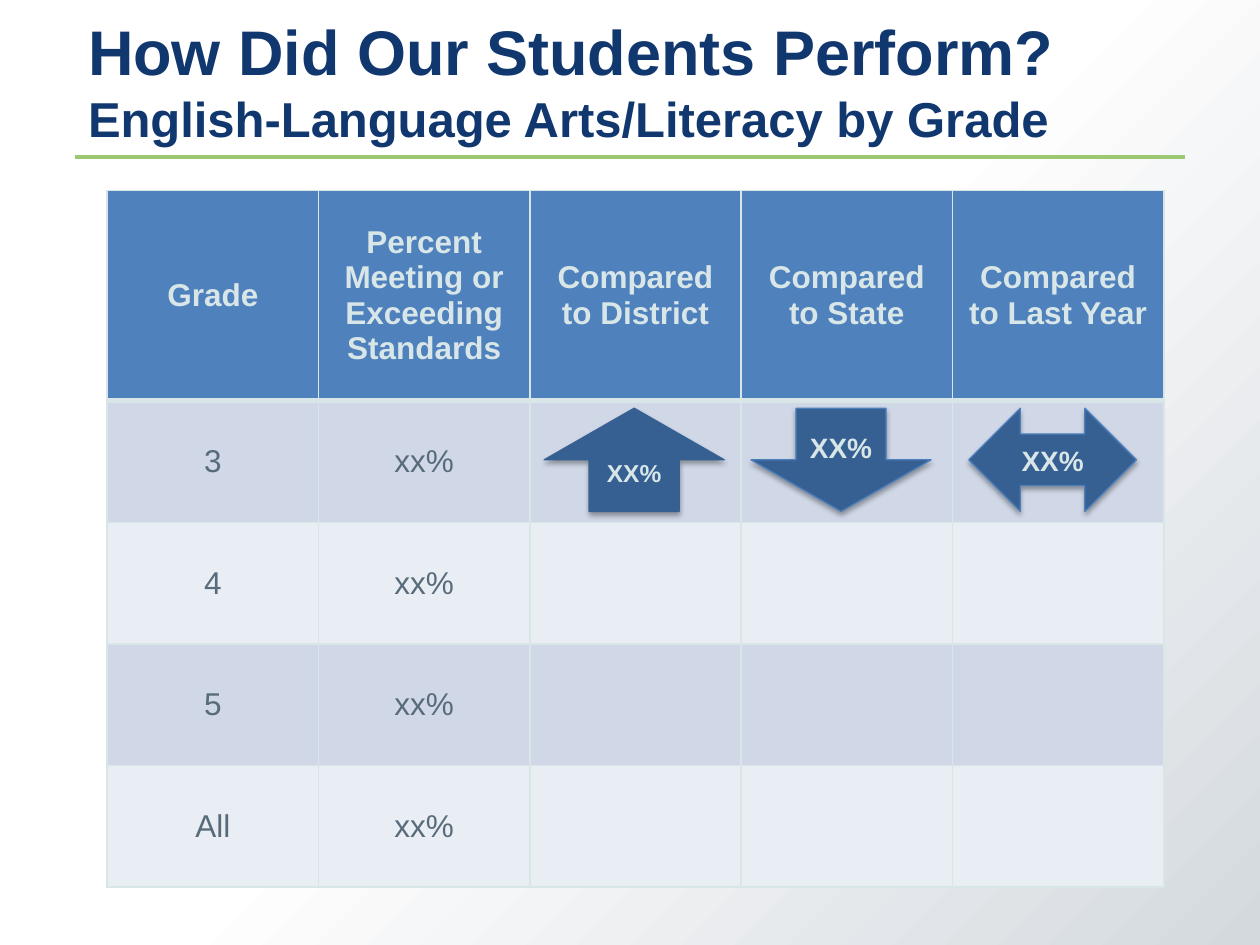
from lxml import etree
from pptx import Presentation
from pptx.dml.color import RGBColor
from pptx.enum.shapes import MSO_CONNECTOR, MSO_SHAPE
from pptx.enum.text import MSO_ANCHOR, MSO_AUTO_SIZE, PP_ALIGN
from pptx.oxml import parse_xml
from pptx.oxml.ns import nsdecls, qn
from pptx.util import Cm, Pt

UP, DOWN, BOTH = MSO_SHAPE.UP_ARROW, MSO_SHAPE.DOWN_ARROW, MSO_SHAPE.LEFT_RIGHT_ARROW
STRAIGHT = MSO_CONNECTOR.STRAIGHT
MIDDLE, BOTTOM = MSO_ANCHOR.MIDDLE, MSO_ANCHOR.BOTTOM
LEFT, CENTER = PP_ALIGN.LEFT, PP_ALIGN.CENTER
NO_FIT = MSO_AUTO_SIZE.NONE

WHITE = RGBColor(0xFF, 0xFF, 0xFF)
GRAY = RGBColor(0xD4, 0xD9, 0xDE)
NAVY = RGBColor(0x11, 0x37, 0x6F)
GREEN = RGBColor(0x9B, 0xC8, 0x72)
PALE = RGBColor(0xD8, 0xE6, 0xE8)
SLATE = RGBColor(0x58, 0x6B, 0x7A)
HEAD = RGBColor(0x4F, 0x81, 0xBD)
BANDS = RGBColor(0xE9, 0xED, 0xF4), RGBColor(0xD0, 0xD8, 0xE8)
DARK = RGBColor(0x37, 0x60, 0x92)
EDGE = RGBColor(0x4B, 0x7E, 0xBC)

PERCENT = "Percent Meeting or Exceeding Standards"
ROWS = [
    ["Grade", PERCENT, "Compared to District", "Compared to State", "Compared to Last Year"],
    ["3", "xx%"],
    ["4", "xx%"],
    ["5", "xx%"],
    ["All", "xx%"],
]


class Page:
    font = "Arial"

    def __init__(self, deck):
        self.slide = deck.slides.add_slide(deck.slide_layouts[5])
        self.shapes = self.slide.shapes

    def style(self, para, size, color, bold=True, align=CENTER):
        para.alignment = align
        para.font.name = self.font
        para.font.size = Pt(size)
        para.font.bold = bold
        para.font.color.rgb = color

    def backdrop(self, start, end):
        fill = self.slide.background.fill
        fill.gradient()
        fill.gradient_angle = 315
        for stop, place, color in zip(fill.gradient_stops, (0.5, 1), (start, end)):
            stop.position = place
            stop.color.rgb = color

    def rule(self, left, right, top):
        line = self.shapes.add_connector(STRAIGHT, Cm(left), Cm(top), Cm(right), Cm(top))
        line.line.color.rgb = GREEN
        line.line.width = Pt(2)
        etree.SubElement(line._element.spPr, qn("a:effectLst"))

    def title(self, main, sub, left, top, width, height):
        box = self.shapes.title
        box.left, box.top, box.width, box.height = map(Cm, (left, top, width, height))
        frame = box.text_frame
        frame.auto_size = NO_FIT
        frame.word_wrap = True
        frame.vertical_anchor = BOTTOM
        para = frame.paragraphs[0]
        self.style(para, 36, NAVY, align=LEFT)
        para.line_spacing = 1
        para.space_before = Pt(0)
        para.add_run().text = main
        para.add_line_break()
        run = para.add_run()
        run.text = sub
        run.font.size = Pt(28)

    def border(self, cell, **widths):
        props = cell._tc.get_or_add_tcPr()
        for side in "LRTB":
            props.append(parse_xml(
                f'<a:ln{side} {nsdecls("a")} w="{Pt(widths.get(side, 1))}"><a:solidFill>'
                f'<a:srgbClr val="{PALE}"/></a:solidFill></a:ln{side}>'))

    def table(self, rows, left, top, width, heights):
        cols = len(rows[0])
        grid = self.shapes.add_table(len(rows), cols, Cm(left), Cm(top),
                                     Cm(width * cols), Cm(sum(heights))).table
        for col in grid.columns:
            col.width = Cm(width)
        for i, (words, height) in enumerate(zip(rows, heights)):
            grid.rows[i].height = Cm(height)
            for cell in grid.rows[i].cells:
                self.border(cell, **{0: {"B": 3}, 1: {"T": 3}}.get(i, {}))
                cell.fill.solid()
                cell.fill.fore_color.rgb = BANDS[i % 2] if i else HEAD
                cell.vertical_anchor = MIDDLE
            for cell, text in zip(grid.rows[i].cells, words):
                cell.text = text
                para = cell.text_frame.paragraphs[0]
                self.style(para, 18, SLATE if i else PALE, bold=i == 0)
                gap = 0 if text == PERCENT else 18
                para.space_before = para.space_after = Pt(gap)

    def arrow(self, kind, left, top, width, height, size, edge):
        shape = self.shapes.add_shape(kind, Cm(left), Cm(top), Cm(width), Cm(height))
        shape.fill.solid()
        shape.fill.fore_color.rgb = DARK
        shape.line.color.rgb = edge
        shape.line.width = Pt(0.75)
        shape.shadow.inherit = False
        shape._element.spPr.find(qn("a:effectLst")).append(parse_xml(
            f'<a:outerShdw {nsdecls("a")} blurRad="{Pt(3.1)}" dist="{Pt(1.8)}" '
            'dir="5400000" rotWithShape="0"><a:srgbClr val="000000">'
            '<a:alpha val="35000"/></a:srgbClr></a:outerShdw>'))
        frame = shape.text_frame
        frame.margin_left = frame.margin_right = 0
        frame.vertical_anchor = MIDDLE
        frame.text = "XX%"
        self.style(frame.paragraphs[0], size, PALE)


def main():
    deck = Presentation()
    deck.slide_width, deck.slide_height = Cm(25.4), Cm(19.05)
    page = Page(deck)
    page.backdrop(WHITE, GRAY)
    page.rule(1.52, 23.88, 3.17)
    page.title("How Did Our Students Perform?", "English-Language Arts/Literacy by Grade",
               1.52, 1.52, 22.38, 1.57)
    page.table(ROWS, 2.16, 3.84, 4.26, [4.24] + [2.45] * 4)
    for kind, left, width, size, edge in (
        (UP, 10.97, 3.63, 14, DARK),
        (DOWN, 15.14, 3.63, 16, EDGE),
        (BOTH, 19.53, 3.38, 16, EDGE),
    ):
        page.arrow(kind, left, 8.23, width, 2.08, size, edge)
    deck.save("out.pptx")


if __name__ == "__main__":
    main()
